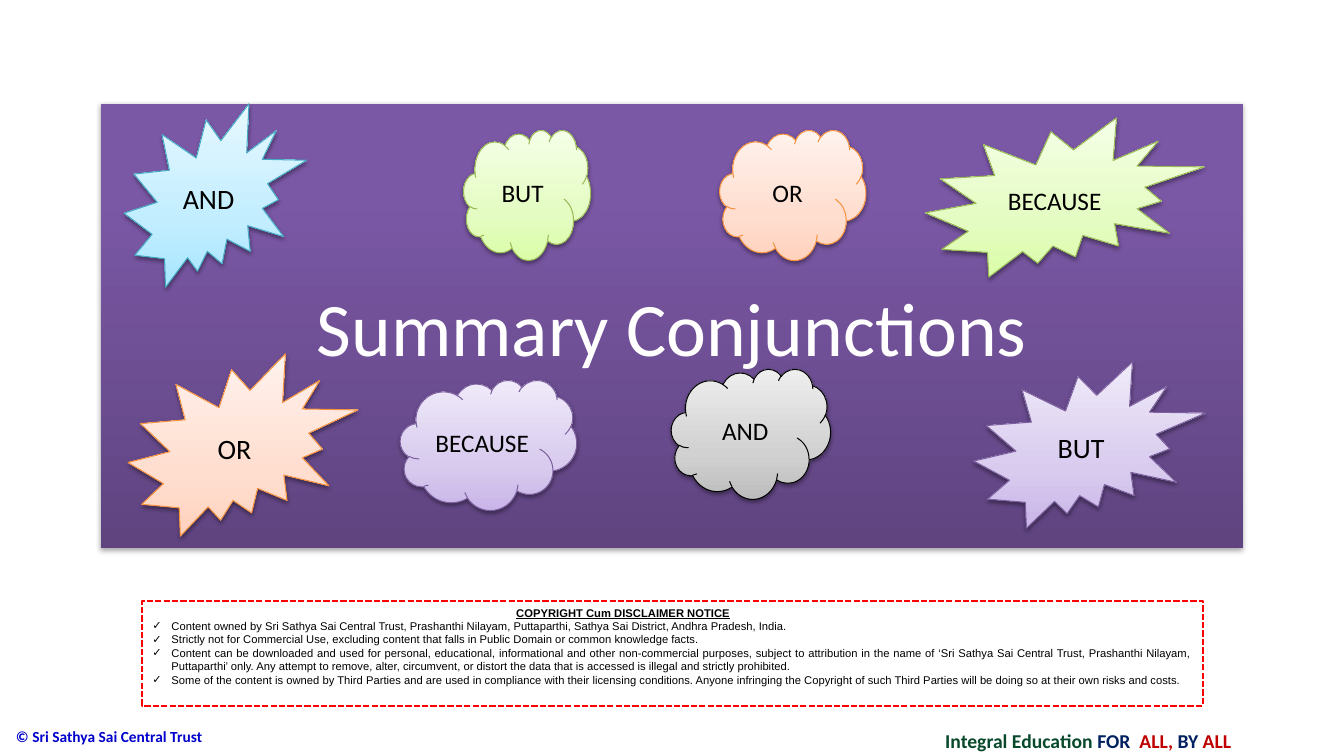
"""Build the summary slide on conjunctions."""
from lxml import etree
from pptx import Presentation
from pptx import util as u
from pptx.dml.color import RGBColor
from pptx.enum import dml, shapes, text
from pptx.oxml.ns import qn

WIDTH, HEIGHT = u.Inches(13.33), u.Inches(7.5)

PALETTES = {
    "blue": ("46AAC5", [(0, "A7E6FF"), (35, "C1EDFF"), (100, "E7F8FF")]),
    "orange": ("F69240", [(0, "FFD2BD"), (35, "FFDED0"), (100, "FFF2ED")]),
    "purple": ("7D60A0", [(0, "C9B5E8"), (35, "D8CBEE"), (100, "F0EAF9")]),
    "green": ("98B955", [(0, "DAFDA7"), (35, "E4FCC2"), (100, "F5FFE7")]),
    "grey": ("000000", [(0, "BDBDBD"), (35, "D1D1D1"), (100, "EEEEEE")]),
}
BANNER_STOPS = [(0, "5F4480"), (80, "7B58A6"), (100, "7C57A8")]

BURST = shapes.MSO_SHAPE.EXPLOSION2
CLOUD = shapes.MSO_SHAPE.CLOUD
CONJUNCTIONS = [
    ("AND", BURST, "blue", 20, (9.23, 13.73, 13.58, 24.27)),
    ("OR", BURST, "orange", 20, (9.53, 46.8, 17.1, 24.13)),
    ("BUT", BURST, "purple", 20, (72.45, 47.87, 17.25, 22)),
    ("BECAUSE", BURST, "green", 18, (68.85, 15.6, 20.78, 21.07)),
    ("BUT", CLOUD, "green", 18, (34.5, 17.2, 9.45, 17.2)),
    ("AND", CLOUD, "grey", 18, (49.95, 48.8, 11.85, 17.2)),
    ("OR", CLOUD, "orange", 18, (53.55, 17.2, 10.88, 17.2)),
    ("BECAUSE", CLOUD, "purple", 18, (29.78, 50.27, 13.13, 17.2)),
]

NOTICE_HEADING = "COPYRIGHT Cum DISCLAIMER NOTICE"
NOTICE_TERMS = [
    "Content owned by Sri Sathya Sai Central Trust, Prashanthi Nilayam, Puttaparthi, "
    "Sathya Sai District, Andhra Pradesh, India.",
    "Strictly not for Commercial Use, excluding content that falls in Public Domain "
    "or common knowledge facts.",
    "Content can be downloaded and used for personal, educational, informational and "
    "other non-commercial purposes, subject to attribution in the name of ‘Sri Sathya "
    "Sai Central Trust, Prashanthi Nilayam, Puttaparthi’ only. Any attempt to remove, "
    "alter, circumvent, or distort the data that is accessed is illegal and strictly "
    "prohibited.",
    "Some of the content is owned by Third Parties and are used in compliance with "
    "their licensing conditions. Anyone infringing the Copyright of such Third Parties "
    "will be doing so at their own risks and costs.",
]

OWNER = [("© Sri Sathya Sai Central Trust", "0000CC")]
TAGLINE = [("Integral Education ", "08482B"), ("FOR  ", "002060"),
           ("ALL, ", "C00000"), ("BY", "002060"), (" ALL", "C00000")]


def paint(color_format, hex_color):
    """Set a colour from a hex string."""
    color_format.rgb = RGBColor.from_string(hex_color)


def area(left, top, width, height):
    """Turn percentages of the slide into lengths."""
    return [int(share * side / 100) for share, side in
            zip((left, top, width, height), (WIDTH, HEIGHT, WIDTH, HEIGHT))]


def place(shape, shares):
    """Move a placeholder to its share of the slide."""
    shape.left, shape.top, shape.width, shape.height = area(*shares)


def child(parent, tag, **attributes):
    """Add a drawing element to its parent."""
    return etree.SubElement(parent, qn("a:" + tag),
                            {name: str(value) for name, value in attributes.items()})


def shade(shape, stops):
    """Fill a shape with a gradient rising from the bottom."""
    shape.fill.gradient()
    gradient = shape.element.spPr.find(qn("a:gradFill"))
    for part in list(gradient):
        gradient.remove(part)
    stop_list = child(gradient, "gsLst")
    for position, hex_color in stops:
        stop = child(stop_list, "gs", pos=position * 1000)
        child(stop, "srgbClr", val=hex_color)
    child(gradient, "lin", ang=270 * 60000, scaled=0)


def cast_shadow(shape, opacity, distance):
    """Give a shape a soft shadow straight below it."""
    shape.shadow.inherit = False
    effects = shape.element.spPr.find(qn("a:effectLst"))
    shadow = child(effects, "outerShdw", blurRad=u.Pt(3.15), dist=u.Pt(distance),
                   dir=90 * 60000, rotWithShape=0)
    child(child(shadow, "srgbClr", val="000000"), "alpha", val=opacity * 1000)


def style(run, size, hex_color, font="Calibri", bold=False):
    """Format a run."""
    run.font.name, run.font.size, run.font.bold = font, u.Pt(size), bold
    paint(run.font.color, hex_color)


def write_centred(shape, wording, size, hex_color):
    """Write one centred line in the middle of a shape."""
    frame = shape.text_frame
    frame.text = wording
    frame.word_wrap = True
    frame.vertical_anchor = text.MSO_ANCHOR.MIDDLE
    frame.paragraphs[0].alignment = text.PP_ALIGN.CENTER
    style(frame.paragraphs[0].runs[0], size, hex_color)


def add_banner(slide, wording):
    """Turn the title into the large purple banner."""
    banner = slide.shapes.title
    place(banner, (7.5, 13.73, 85, 58.8))
    shade(banner, BANNER_STOPS)
    cast_shadow(banner, 35, 1.8)
    write_centred(banner, wording, 54, "FFFFFF")


def add_conjunction(slide, word, outline, palette, size, shares):
    """Add a burst or cloud that holds one conjunction."""
    badge = slide.shapes.add_shape(outline, *area(*shares))
    edge, stops = PALETTES[palette]
    shade(badge, stops)
    paint(badge.line.color, edge)
    badge.line.width = u.Pt(0.75)
    cast_shadow(badge, 38, 1.6)
    write_centred(badge, word, size, "000000")


def indent(paragraph, margin, hanging=0, bullet=None):
    """Set the indents and bullet of a paragraph, in inches."""
    paragraph.space_before = u.Pt(0)
    properties = paragraph._p.get_or_add_pPr()
    properties.set("marL", str(u.Inches(margin)))
    properties.set("indent", str(u.Inches(-hanging)))
    if bullet:
        child(properties, "buFont", typeface="Arial")
        child(properties, "buChar", char=bullet)
    else:
        child(properties, "buNone")


def add_notice(slide):
    """Write the disclaimer list in its dashed frame."""
    notice = slide.placeholders[1]
    place(notice, (10.58, 79.47, 78.9, 13.87))
    paint(notice.line.color, "FF0000")
    notice.line.width = u.Pt(1.5)
    notice.line.dash_style = dml.MSO_LINE.SQUARE_DOT
    frame = notice.text_frame
    frame.text = "\n".join([NOTICE_HEADING, *NOTICE_TERMS])
    frame.auto_size = text.MSO_AUTO_SIZE.NONE
    frame.vertical_anchor = text.MSO_ANCHOR.TOP
    heading, *terms = frame.paragraphs
    indent(heading, 3.61)
    style(heading.runs[0], 8, "000000", "Arial", bold=True)
    heading.runs[0].font.underline = True
    for term in terms:
        indent(term, 0.19, 0.19, "✓")
        term.alignment = text.PP_ALIGN.JUSTIFY
        style(term.runs[0], 8, "000000", "Arial")


def add_footer(slide, pieces, size, alignment, shares):
    """Add a bold footer line made of coloured pieces."""
    frame = slide.shapes.add_textbox(*area(*shares)).text_frame
    frame.word_wrap = True
    frame.vertical_anchor = text.MSO_ANCHOR.MIDDLE
    line = frame.paragraphs[0]
    line.alignment = alignment
    for wording, hex_color in pieces:
        run = line.add_run()
        run.text = wording
        style(run, size, hex_color, bold=True)


def main():
    """Build and save the slide."""
    deck = Presentation()
    deck.slide_width, deck.slide_height = WIDTH, HEIGHT
    slide = deck.slides.add_slide(deck.slide_layouts[1])
    add_footer(slide, OWNER, 11, text.PP_ALIGN.LEFT, (0.45, 94.67, 26.5, 5.33))
    add_footer(slide, TAGLINE, 14, text.PP_ALIGN.CENTER, (62.63, 94.93, 36.68, 6))
    add_notice(slide)
    add_banner(slide, "Summary Conjunctions")
    for conjunction in CONJUNCTIONS:
        add_conjunction(slide, *conjunction)
    deck.save("out.pptx")


if __name__ == "__main__":
    main()
